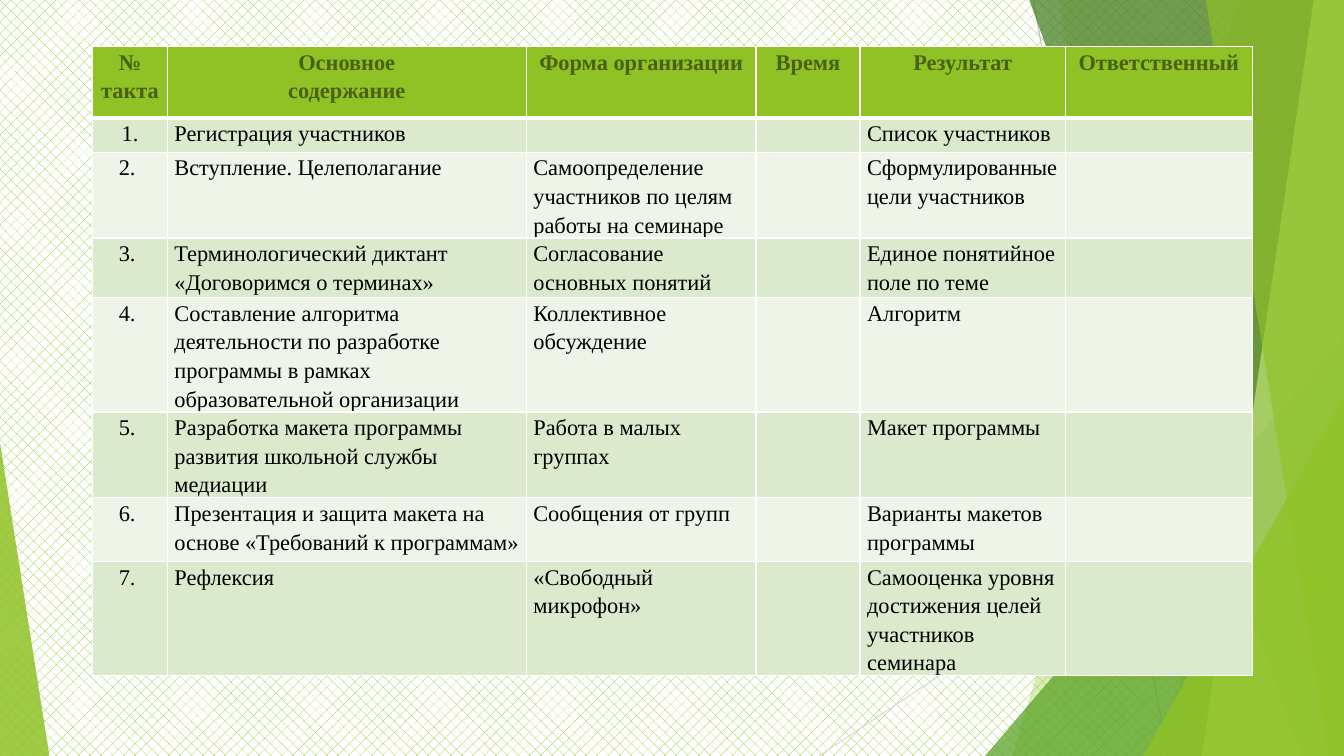
from dataclasses import dataclass

from lxml.etree import SubElement
from pptx import Presentation
from pptx.dml.color import RGBColor as RGB
from pptx.enum.dml import MSO_PATTERN as PATTERN
from pptx.enum.shapes import MSO_CONNECTOR as CONNECTOR, MSO_SHAPE as SHAPE
from pptx.enum.text import PP_ALIGN as ALIGN
from pptx.oxml.ns import qn
from pptx.util import Inches, Pt

COLORS = {
    "green": "90C226", "mid": "54A021", "dark": "3F7819", "lime": "C0E474",
    "head_text": "486113", "text": "000000", "white": "FFFFFF",
    "odd": "DBE9CD", "even": "EEF4E8", "gray": "BFBFBF", "light_gray": "D9D9D9",
}
FONT, SIZE, SPACING = "Times New Roman", 16, 1.15
WIDTH, HEIGHT = Inches(13.33), Inches(7.5)

COLS = [5.55, 26.71, 17.1, 7.73, 15.3, 13.88]
ROWS = [9.47, 4.53, 7.87, 7.87, 11.07, 7.47, 8.4, 10.27]
HEADER = ["№ такта", "Основное\nсодержание", "Форма организации",
          "Время", "Результат", "Ответственный"]


@dataclass
class Ray:
    x1: float
    y1: float
    x2: float
    y2: float
    color: str


@dataclass
class Wedge:
    top: float
    bottom: float
    color: str
    opacity: int


@dataclass
class Corner:
    left: float
    top: float
    width: float
    apex: int
    color: str
    opacity: int


@dataclass
class Step:
    number: str
    content: str
    form: str
    result: str

    def cells(self) -> list[str]:
        return [self.number, self.content, self.form, "", self.result, ""]


RAYS = [
    Ray(76.89, 0, 86.87, 100, "gray"),
    Ray(100, 53.73, 60.92, 100, "light_gray"),
]
FACETS = [
    Wedge(92.12, 75.32, "green", 30),
    Wedge(78.77, 88.75, "green", 20),
    Corner(73.29, 44.4, 26.71, 1, "mid", 72),
    Wedge(76.59, 96.85, "dark", 70),
    Wedge(97.75, 89.42, "lime", 70),
    Wedge(89.72, 98.87, "green", 65),
    Corner(85.07, 52.4, 14.93, 1, "green", 80),
    Corner(0, 58.53, 3.68, 0, "green", 85),
]
STEPS = [
    Step("1.", "Регистрация участников", "", "Список участников"),
    Step("2. ", "Вступление. Целеполагание",
         "Самоопределение участников по целям работы на семинаре",
         "Сформулированные цели участников"),
    Step("3. ", "Терминологический диктант «Договоримся о терминах»",
         "Согласование основных понятий", "Единое понятийное поле по теме"),
    Step("4. ", "Составление алгоритма деятельности по разработке программы "
         "в рамках образовательной организации",
         "Коллективное обсуждение", "Алгоритм"),
    Step("5. ", "Разработка макета программы развития школьной службы медиации",
         "Работа в малых группах", "Макет программы"),
    Step("6. ", "Презентация и защита макета на основе «Требований к программам»",
         "Сообщения от групп", "Варианты макетов программы"),
    Step("7. ", "Рефлексия", "«Свободный микрофон»",
         "Самооценка уровня достижения целей участников семинара"),
]


def rgb(name: str) -> RGB:
    return RGB.from_string(COLORS[name])


def across(share: float) -> int:
    return round(WIDTH * share / 100)


def down(share: float) -> int:
    return round(HEIGHT * share / 100)


def draw_ray(s, ray: Ray) -> None:
    line = s.shapes.add_connector(CONNECTOR.STRAIGHT, across(ray.x1), down(ray.y1),
                                  across(ray.x2), down(ray.y2))
    line.line.color.rgb = rgb(ray.color)
    line.line.width = Pt(0.75)
    SubElement(line.element.spPr, qn("a:effectLst"))


def draw_facet(s, facet: Wedge | Corner) -> None:
    if isinstance(facet, Wedge):
        builder = s.shapes.build_freeform(across(facet.top), 0)
        builder.add_line_segments([(WIDTH, 0), (WIDTH, HEIGHT),
                                   (across(facet.bottom), HEIGHT)], close=True)
        sp = builder.convert_to_shape()
    else:
        sp = s.shapes.add_shape(SHAPE.ISOSCELES_TRIANGLE, across(facet.left),
                                down(facet.top), across(facet.width),
                                down(100 - facet.top))
        sp.adjustments[0] = facet.apex
    sp.shadow.inherit = False
    sp.line.fill.background()
    sp.fill.solid()
    sp.fill.fore_color.rgb = rgb(facet.color)
    color = sp.element.spPr.find(qn("a:solidFill")).find(qn("a:srgbClr"))
    SubElement(color, qn("a:alpha"), val=str(facet.opacity * 1000))


def set_borders(cell, bottom: int) -> None:
    tcPr = cell._tc.get_or_add_tcPr()
    for side, width in {"L": 1, "R": 1, "T": 1, "B": bottom}.items():
        ln = SubElement(tcPr, qn(f"a:ln{side}"), w=str(Pt(width)))
        fill = SubElement(ln, qn("a:solidFill"))
        SubElement(fill, qn("a:srgbClr"), val=COLORS["white"])


def fill_cell(cell, text: str, fill: str, centered: bool, header: bool) -> None:
    set_borders(cell, 3 if header else 1)
    margin = across(0.53)
    for name, value in {"margin_left": margin, "margin_right": margin,
                        "margin_top": 0, "margin_bottom": 0}.items():
        setattr(cell, name, value)
    cell.fill.solid()
    cell.fill.fore_color.rgb = rgb(fill)
    cell.text_frame.text = text
    for p in cell.text_frame.paragraphs:
        p.line_spacing = SPACING
        p.alignment = ALIGN.CENTER if centered else ALIGN.LEFT
        for r in p.runs:
            for name, value in {"size": Pt(SIZE), "name": FONT, "bold": header}.items():
                setattr(r.font, name, value)
            r.font.color.rgb = rgb("head_text" if header else "text")
        if not p.runs:
            SubElement(p._p, qn("a:endParaRPr"), sz=str(SIZE * 100))


def draw_schedule(s) -> None:
    lines = [HEADER] + [step.cells() for step in STEPS]
    frame = s.shapes.add_table(len(ROWS), len(COLS), across(6.9), down(6.13),
                               across(sum(COLS)), down(89.73))
    table = frame.table
    for column, share in zip(table.columns, COLS):
        column.width = across(share)
    for row, share in zip(table.rows, ROWS):
        row.height = down(share)
    for i, line in enumerate(lines):
        header = i == 0
        fill = "green" if header else "odd" if i % 2 else "even"
        for j, text in enumerate(line):
            fill_cell(table.cell(i, j), text, fill, header or j == 0, header)


def main() -> None:
    prs = Presentation()
    prs.slide_width, prs.slide_height = WIDTH, HEIGHT
    s = prs.slides.add_slide(prs.slide_layouts[6])
    background = s.background.fill
    background.patterned()
    background.pattern = PATTERN.PERCENT_25
    background.fore_color.rgb = rgb("green")
    background.back_color.rgb = rgb("white")
    for ray in RAYS:
        draw_ray(s, ray)
    for facet in FACETS:
        draw_facet(s, facet)
    draw_schedule(s)
    prs.save("out.pptx")


if __name__ == "__main__":
    main()
